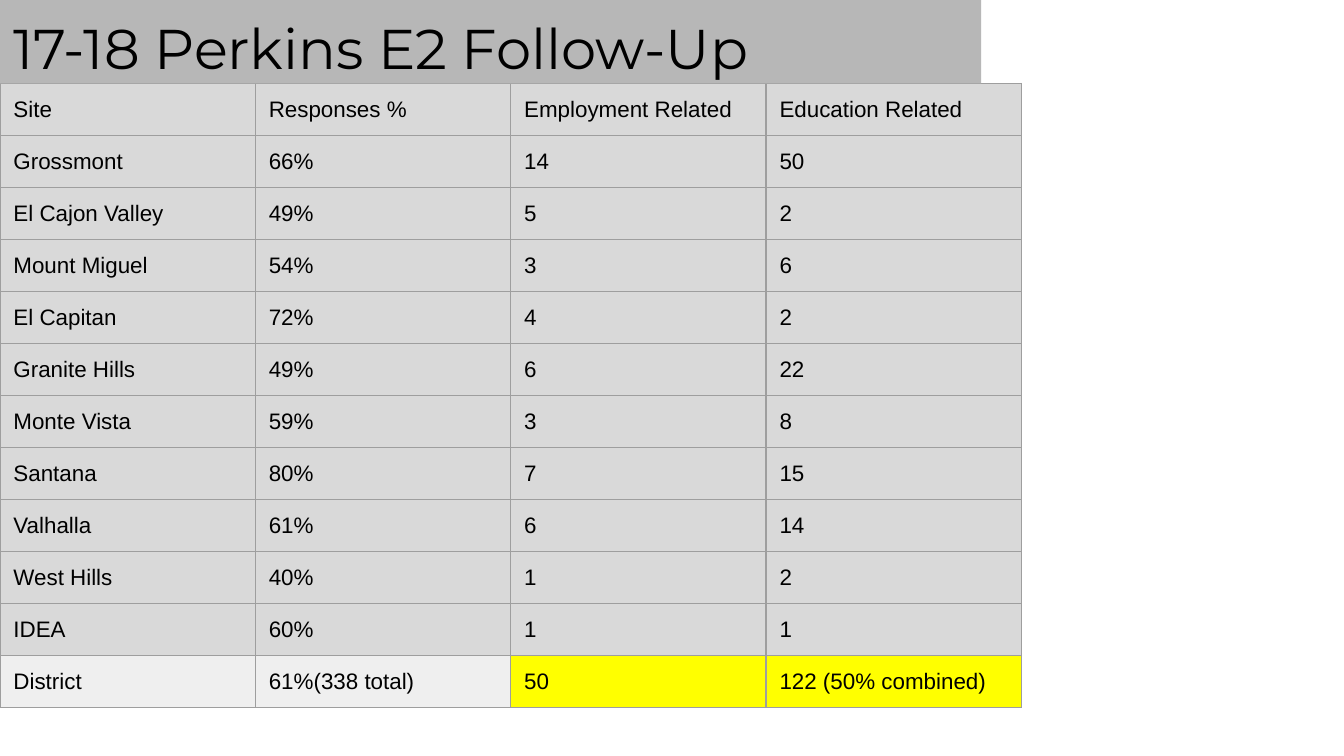
from lxml.etree import SubElement
from pptx import Presentation
from pptx.dml.color import RGBColor
from pptx.enum.shapes import MSO_SHAPE as Shape
from pptx.enum.text import MSO_ANCHOR as Anchor, PP_ALIGN as Align
from pptx.oxml.ns import qn
from pptx.util import Inches, Pt

BLACK = RGBColor(0x00, 0x00, 0x00)
TITLE_GRAY = RGBColor(0xB7, 0xB7, 0xB7)
CELL_GRAY = RGBColor(0xD9, 0xD9, 0xD9)
TOTAL_GRAY = RGBColor(0xEF, 0xEF, 0xEF)
YELLOW = RGBColor(0xFF, 0xFF, 0x00)
BORDER_GRAY = RGBColor(0x9E, 0x9E, 0x9E)

ROWS = [
    ("Site", "Responses %", "Employment Related", "Education Related"),
    ("Grossmont", "66%", "14", "50"),
    ("El Cajon Valley", "49%", "5", "2"),
    ("Mount Miguel", "54%", "3", "6"),
    ("El Capitan", "72%", "4", "2"),
    ("Granite Hills", "49%", "6", "22"),
    ("Monte Vista", "59%", "3", "8"),
    ("Santana", "80%", "7", "15"),
    ("Valhalla", "61%", "6", "14"),
    ("West Hills", "40%", "1", "2"),
    ("IDEA", "60%", "1", "1"),
    ("District", "61%(338 total)", "50", "122 (50% combined)"),
]
TOTAL_FILLS = [TOTAL_GRAY, TOTAL_GRAY, YELLOW, YELLOW]


class SlideBuilder:
    title_font, title_size = "Montserrat", Pt(30)
    body_font, body_size = "Arial", Pt(12)
    margin = Inches(0.1)
    border = Pt(0.75)

    def __init__(self, slide):
        self.s = slide

    def set_text(self, tf, text, font, size):
        tf.text = text
        p = tf.paragraphs[0]
        p.alignment = Align.LEFT
        r = p.runs[0]
        r.font.name = font
        r.font.size = size
        r.font.color.rgb = BLACK

    def set_margins(self, box):
        box.margin_left = box.margin_right = self.margin
        box.margin_top = box.margin_bottom = self.margin
        box.vertical_anchor = Anchor.TOP

    def title(self, text, x, y, w, h):
        sp = self.s.shapes.add_shape(
            Shape.RECTANGLE, Inches(x), Inches(y), Inches(w), Inches(h))
        sp.shadow.inherit = False
        sp.fill.solid()
        sp.fill.fore_color.rgb = TITLE_GRAY
        sp.line.fill.background()
        tf = sp.text_frame
        tf.word_wrap = True
        self.set_margins(tf)
        self.set_text(tf, text, self.title_font, self.title_size)

    def cell_borders(self, cell):
        tc_pr = cell._tc.get_or_add_tcPr()
        for i, side in enumerate(("a:lnL", "a:lnR", "a:lnT", "a:lnB")):
            ln = tc_pr.makeelement(qn(side), {"w": str(self.border)})
            fill = SubElement(ln, qn("a:solidFill"))
            SubElement(fill, qn("a:srgbClr"), val=str(BORDER_GRAY))
            tc_pr.insert(i, ln)

    def table(self, rows, total_fills, x, y, col_w, row_h):
        n_rows, n_cols = len(rows), len(rows[0])
        table = self.s.shapes.add_table(
            n_rows, n_cols, Inches(x), Inches(y),
            Inches(col_w * n_cols), Inches(row_h * n_rows)).table
        table.first_row = table.horz_banding = False
        for col in table.columns:
            col.width = Inches(col_w)
        for i, values in enumerate(rows):
            table.rows[i].height = Inches(row_h)
            fills = total_fills if i == n_rows - 1 else [CELL_GRAY] * n_cols
            for j, (value, color) in enumerate(zip(values, fills)):
                cell = table.cell(i, j)
                self.set_margins(cell)
                self.set_text(cell.text_frame, value, self.body_font, self.body_size)
                cell.fill.solid()
                cell.fill.fore_color.rgb = color
                self.cell_borders(cell)


def main():
    prs = Presentation()
    prs.slide_width = Inches(10)
    prs.slide_height = prs.slide_width * 9 // 16
    builder = SlideBuilder(prs.slides.add_slide(prs.slide_layouts[6]))
    builder.table(ROWS, TOTAL_FILLS, 0, 0.62, 1.9, 0.38)
    builder.title("17-18 Perkins E2 Follow-Up", 0, 0, 7.3, 0.62)
    prs.save("out.pptx")


if __name__ == "__main__":
    main()
